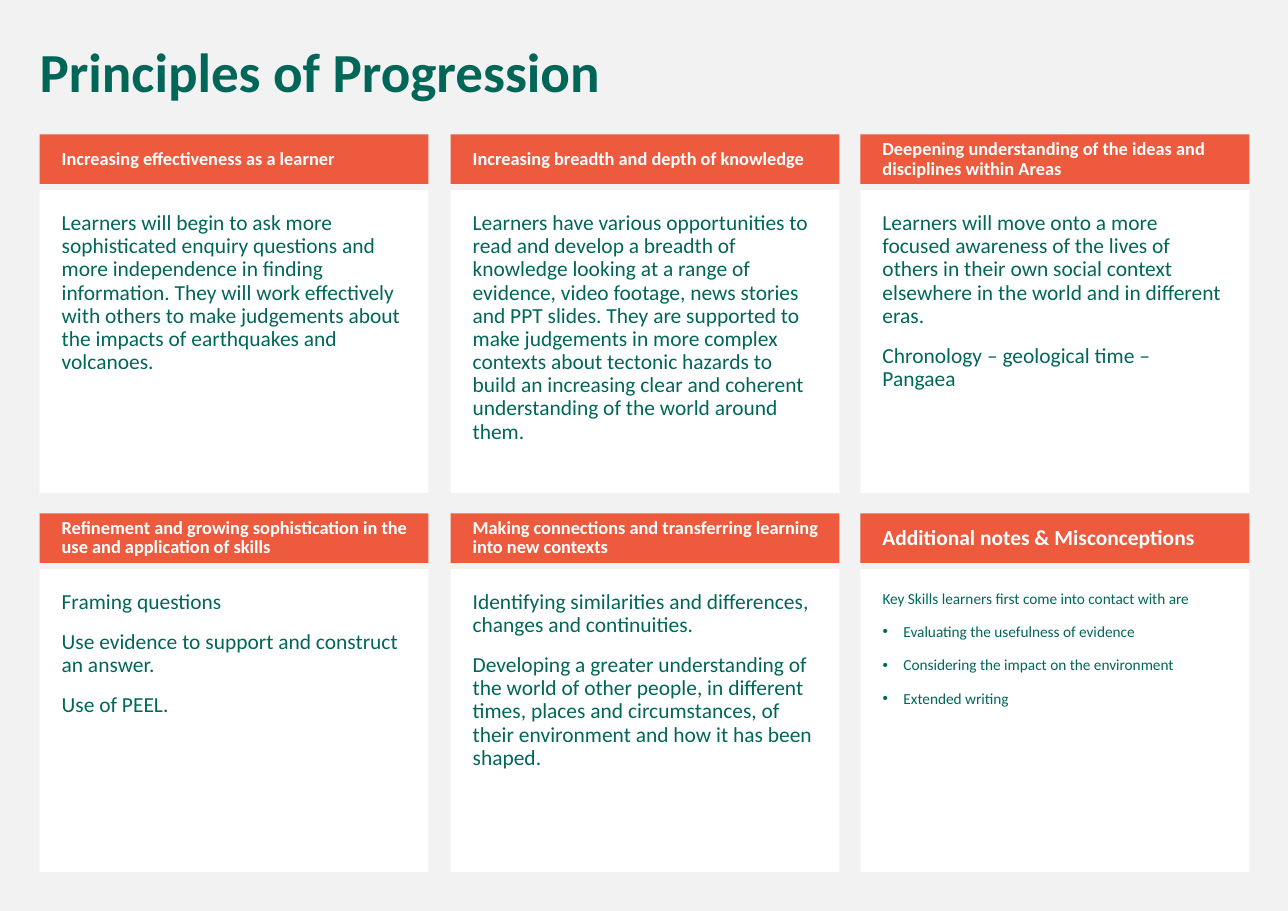
from lxml import etree
from pptx import Presentation
from pptx.dml.color import RGBColor
from pptx.enum.shapes import MSO_SHAPE
from pptx.enum.text import MSO_ANCHOR, MSO_AUTO_SIZE, PP_ALIGN
from pptx.oxml.ns import qn
from pptx.util import Inches, Pt

RECTANGLE = MSO_SHAPE.RECTANGLE
TOP, MIDDLE = MSO_ANCHOR.TOP, MSO_ANCHOR.MIDDLE
LEFT = PP_ALIGN.LEFT
NO_FIT = MSO_AUTO_SIZE.NONE

GREEN, ORANGE, WHITE, GREY = "006758", "ED5A3E", "FFFFFF", "F2F2F2"
COLUMN_LEFTS = (0.36, 4.09, 7.81)
ROW_TOPS = (1.22, 4.66)
CARD_WIDTH, HEADING_HEIGHT, CARD_HEIGHT = 3.53, 0.45, 2.75
CARD_OFFSET = 0.505
BULLET_INDENT = 0.19

PRINCIPLES = [
    ("Increasing effectiveness as a learner", 12, [
        "Learners will begin to ask more sophisticated enquiry questions and more independence "
        "in finding information. They will work effectively with others to make judgements about "
        "the impacts of earthquakes and volcanoes."]),
    ("Increasing breadth and depth of knowledge", 12, [
        "Learners have various opportunities to read and develop a breadth of knowledge looking "
        "at a range of evidence, video footage, news stories and PPT slides. They are supported "
        "to make judgements in more complex contexts about tectonic hazards to build an "
        "increasing clear and coherent understanding of the world around them."]),
    ("Deepening understanding of the ideas and disciplines within Areas", 12, [
        "Learners will move onto a more focused awareness of the lives of others in their own "
        "social context elsewhere in the world and in different eras.",
        "Chronology – geological time – Pangaea"]),
    ("Refinement and growing sophistication in the use and application of skills", 12, [
        "Framing questions",
        "Use evidence to support and construct an answer.",
        "Use of PEEL."]),
    ("Making connections and transferring learning into new contexts", 12, [
        "Identifying similarities and differences, changes and continuities.",
        "Developing a greater understanding of the world of other people, in different times, "
        "places and circumstances, of their environment and how it has been shaped."]),
    ("Additional notes & Misconceptions", 14, [
        "Key Skills learners first come into contact with are",
        "Evaluating the usefulness of evidence",
        "Considering the impact on the environment",
        "Extended writing"]),
]


def rgb(color):
    return RGBColor.from_string(color)


def write(shape, lines, box, size, color, bold=False, fill=None, anchor=TOP,
          insets=(0.1, 0.05, 0.1, 0.05), bullets_from=None):
    shape.left, shape.top, shape.width, shape.height = map(Inches, box)
    if fill:
        shape.fill.solid()
        shape.fill.fore_color.rgb = rgb(fill)
        shape.line.fill.background()
    frame = shape.text_frame
    frame.text = "\n".join(lines)
    frame.word_wrap = True
    frame.auto_size = NO_FIT
    frame.vertical_anchor = anchor
    (frame.margin_left, frame.margin_top,
     frame.margin_right, frame.margin_bottom) = map(Inches, insets)
    for number, paragraph in enumerate(frame.paragraphs):
        paragraph.alignment = LEFT
        paragraph.line_spacing = 0.9
        paragraph.space_before = Pt(11)
        font = paragraph.runs[0].font
        font.name, font.size, font.bold = "Calibri", Pt(size), bold
        font.color.rgb = rgb(color)
        bulleted = bullets_from is not None and number >= bullets_from
        indent = Inches(BULLET_INDENT) if bulleted else 0
        properties = paragraph._p.get_or_add_pPr()
        properties.set("marL", str(indent))
        properties.set("indent", str(-indent))
        if bulleted:
            etree.SubElement(properties, qn("a:buFont")).set("typeface", "Arial")
            etree.SubElement(properties, qn("a:buChar")).set("char", "•")
        else:
            etree.SubElement(properties, qn("a:buNone"))


deck = Presentation()
deck.slide_width, deck.slide_height = Inches(11.69), Inches(8.27)
slide = deck.slides.add_slide(deck.slide_layouts[1])
slide.background.fill.solid()
slide.background.fill.fore_color.rgb = rgb(GREY)

title, key_skills = slide.placeholders
write(title, ["Principles of Progression"], (0.26, 0.36, 11.08, 0.65), 36, GREEN, bold=True)

for index, (principle, heading_size, details) in enumerate(PRINCIPLES):
    row, column = divmod(index, len(COLUMN_LEFTS))
    left, top = COLUMN_LEFTS[column], ROW_TOPS[row]
    heading_box = (left, top, CARD_WIDTH, HEADING_HEIGHT)
    card_box = (left, top + CARD_OFFSET, CARD_WIDTH, CARD_HEIGHT)

    heading = slide.shapes.add_shape(RECTANGLE, *map(Inches, heading_box))
    heading.shadow.inherit = False
    write(heading, [principle], heading_box, heading_size, WHITE, bold=True, fill=ORANGE,
          anchor=MIDDLE, insets=(0.2, 0.05, 0.1, 0.05))

    is_key_skills = index == len(PRINCIPLES) - 1
    if is_key_skills:
        card = key_skills
    else:
        card = slide.shapes.add_shape(RECTANGLE, *map(Inches, card_box))
        card.shadow.inherit = False
    write(card, details, card_box, 10 if is_key_skills else 14, GREEN, fill=WHITE,
          insets=(0.2, 0.2, 0.2, 0.2), bullets_from=1 if is_key_skills else None)

deck.save("out.pptx")
